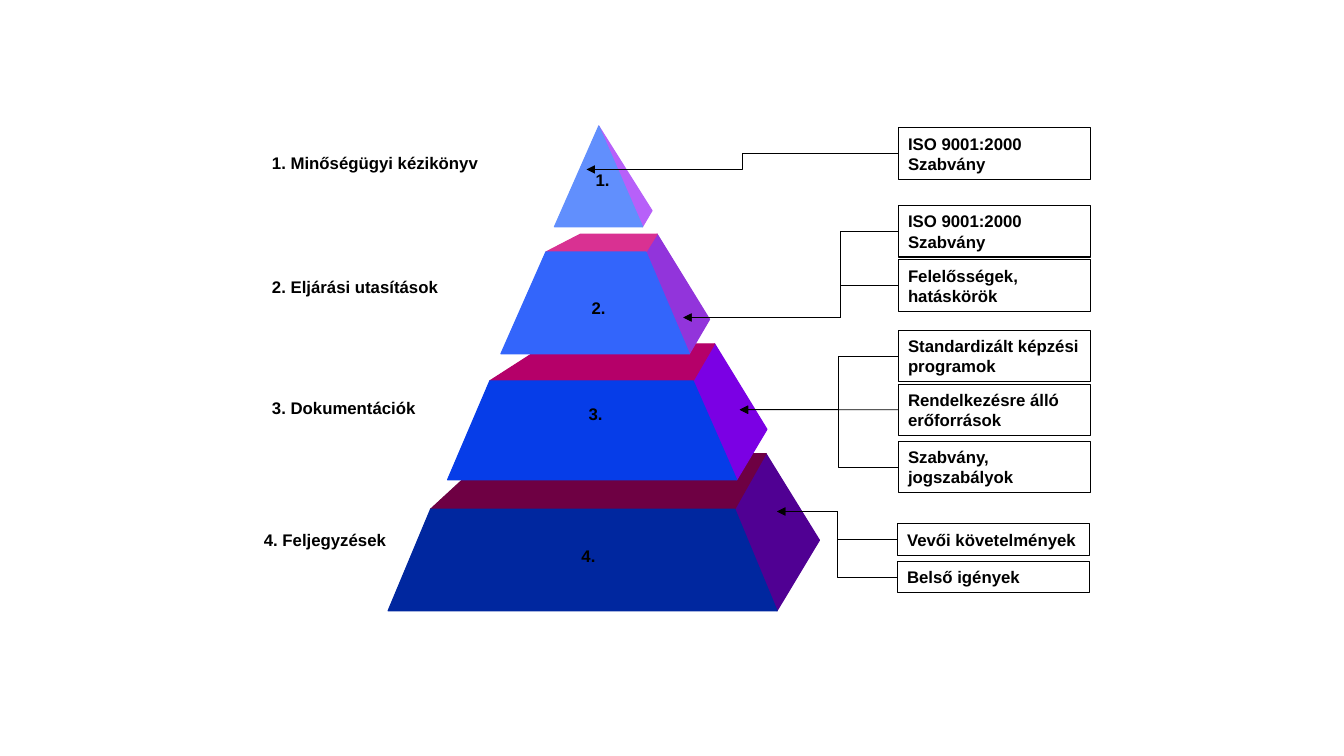
from pptx import Presentation
from pptx.dml.color import RGBColor
from pptx.enum.shapes import MSO_CONNECTOR as CONN, MSO_SHAPE as SHAPE
from pptx.enum.text import MSO_ANCHOR as ANCHOR, PP_ALIGN as ALIGN
from pptx.oxml.xmlchemy import OxmlElement
from pptx.util import Pt

BOX_WIDTH = 137.5
TIERS = [
    dict(label=("1. Minőségügyi kézikönyv", 187.2, 105.8, 197.3),
         number=("1.", 425.5, 121),
         base=(396, 459, 162), rim=(427.7, 427.7, 90), back=(427.7, 427.7, 90),
         corner=(465.8, 150.5), colors=("618FFD", None, "B760F9"),
         target=(419, 121), bend=530, box_left=641.5, box_height=36.7,
         boxes=[("ISO 9001:2000 Szabvány", 91.4)]),
    dict(label=("2. Eljárási utasítások", 187.2, 194.4, 152),
         number=("2.", 422.6, 212.4),
         base=(357.8, 492.5, 252.7), rim=(389.9, 461.5, 180), back=(414.7, 469.4, 167.2),
         corner=(506.9, 228.2), colors=("3365FB", "D93192", "9234DB"),
         target=(488.2, 226.8), bend=600.5, box_left=641.5, box_height=36.7,
         boxes=[("ISO 9001:2000 Szabvány", 146.9), ("Felelősségek, hatáskörök", 185.6)]),
    dict(label=("3. Dokumentációk", 187.2, 280.8, 136),
         number=("3.", 420.5, 288.7),
         base=(319.7, 526.3, 342.7), rim=(349.9, 495.2, 272), back=(391, 510.5, 245.6),
         corner=(547.9, 306.7), colors=("063DE8", "B50069", "7B00E4"),
         target=(528.5, 292.7), bend=599, box_left=641.5, box_height=36.5,
         boxes=[("Standardizált képzési programok", 236),
                ("Rendelkezésre álló erőforrások", 274.4),
                ("Szabvány, jogszabályok", 315.4)]),
    dict(label=("4. Feljegyzések", 181.4, 375.1, 121.7),
         number=("4.", 415.4, 389.5),
         base=(277.2, 555.1, 436.3), rim=(307.6, 524.9, 363.6), back=(350.6, 547.2, 324),
         corner=(585.4, 385.9), colors=("00279F", "6E0043", "500093"),
         target=(555.1, 365.4), bend=598.3, box_left=640.8, box_height=22.5,
         boxes=[("Vevői követelmények", 374.2), ("Belső igények", 401)]),
]
DRAW_ORDER = [0, 3, 2, 1]


def rgb(value):
    return RGBColor.from_string(value)


def write(sp, text):
    tf = sp.text_frame
    p = tf.paragraphs[0]
    p.alignment = ALIGN.LEFT
    r = p.add_run()
    r.text = text
    r.font.name = "Arial"
    r.font.size = Pt(12)
    r.font.bold = True
    r.font.color.rgb = rgb("000000")
    return tf


def add_text(text, left, top, width, height, wrap):
    sp = slide.shapes.add_textbox(Pt(left), Pt(top), Pt(width), Pt(height))
    tf = write(sp, text)
    tf.word_wrap = wrap
    return tf


def add_face(points, color):
    corners = [(Pt(x), Pt(y)) for x, y in points]
    builder = slide.shapes.build_freeform(*corners[0])
    builder.add_line_segments(corners[1:], close=True)
    sp = builder.convert_to_shape()
    sp.shadow.inherit = False
    sp.fill.solid()
    sp.fill.fore_color.rgb = rgb(color)
    sp.line.color.rgb = rgb(color)
    sp.line.width = Pt(0.75)


def add_tier(tier):
    (base_l, base_r, base_y), (rim_l, rim_r, rim_y) = tier["base"], tier["rim"]
    back_l, back_r, back_y = tier["back"]
    front_color, top_color, side_color = tier["colors"]
    rim = [(rim_l, rim_y), (rim_r, rim_y)]
    add_face([(base_r, base_y), rim[1], (back_r, back_y), tier["corner"]], side_color)
    if top_color:
        add_face(rim + [(back_r, back_y), (back_l, back_y)], top_color)
    add_face([(base_l, base_y), (base_r, base_y)] + rim[::-1], front_color)
    text, left, top = tier["number"]
    tf = add_text(text, left, top, 10, 14.4, False)
    tf.margin_left = tf.margin_right = tf.margin_top = tf.margin_bottom = 0


def add_box(text, left, top, height):
    sp = slide.shapes.add_shape(SHAPE.RECTANGLE, Pt(left), Pt(top), Pt(BOX_WIDTH), Pt(height))
    sp.shadow.inherit = False
    sp.fill.background()
    sp.line.color.rgb = rgb("000000")
    sp.line.width = Pt(0.75)
    tf = write(sp, text)
    tf.word_wrap = True
    tf.vertical_anchor = ANCHOR.MIDDLE
    return sp


def add_arrow(box, start, target, bend):
    (x, y), (end_x, end_y) = start, target
    straight = abs(y - end_y) < 1
    kind = CONN.STRAIGHT if straight else CONN.ELBOW
    c = slide.shapes.add_connector(kind, Pt(x), Pt(y), Pt(end_x), Pt(end_y))
    c.line.color.rgb = rgb("000000")
    c.line.width = Pt(0.5)
    tail = OxmlElement("a:tailEnd")
    tail.set("type", "triangle")
    c.line._get_or_add_ln().append(tail)
    sp_pr = c._element.spPr
    sp_pr.append(OxmlElement("a:effectLst"))
    if straight:
        c.begin_connect(box, 1)
    else:
        guide = OxmlElement("a:gd")
        guide.set("name", "adj1")
        guide.set("fmla", f"val {round((x - bend) / (x - end_x) * 100000)}")
        sp_pr.prstGeom.get_or_add_avLst().append(guide)


prs = Presentation()
prs.slide_width, prs.slide_height = Pt(960), Pt(540)
slide = prs.slides.add_slide(prs.slide_layouts[6])

for tier in TIERS:
    text, left, top, width = tier["label"]
    add_text(text, left, top, width, 21.6, True)

for tier in (TIERS[i] for i in DRAW_ORDER):
    add_tier(tier)
    left, height = tier["box_left"], tier["box_height"]
    for text, top in tier["boxes"]:
        box = add_box(text, left, top, height)
        add_arrow(box, (left, top + height / 2), tier["target"], tier["bend"])

prs.save("out.pptx")
